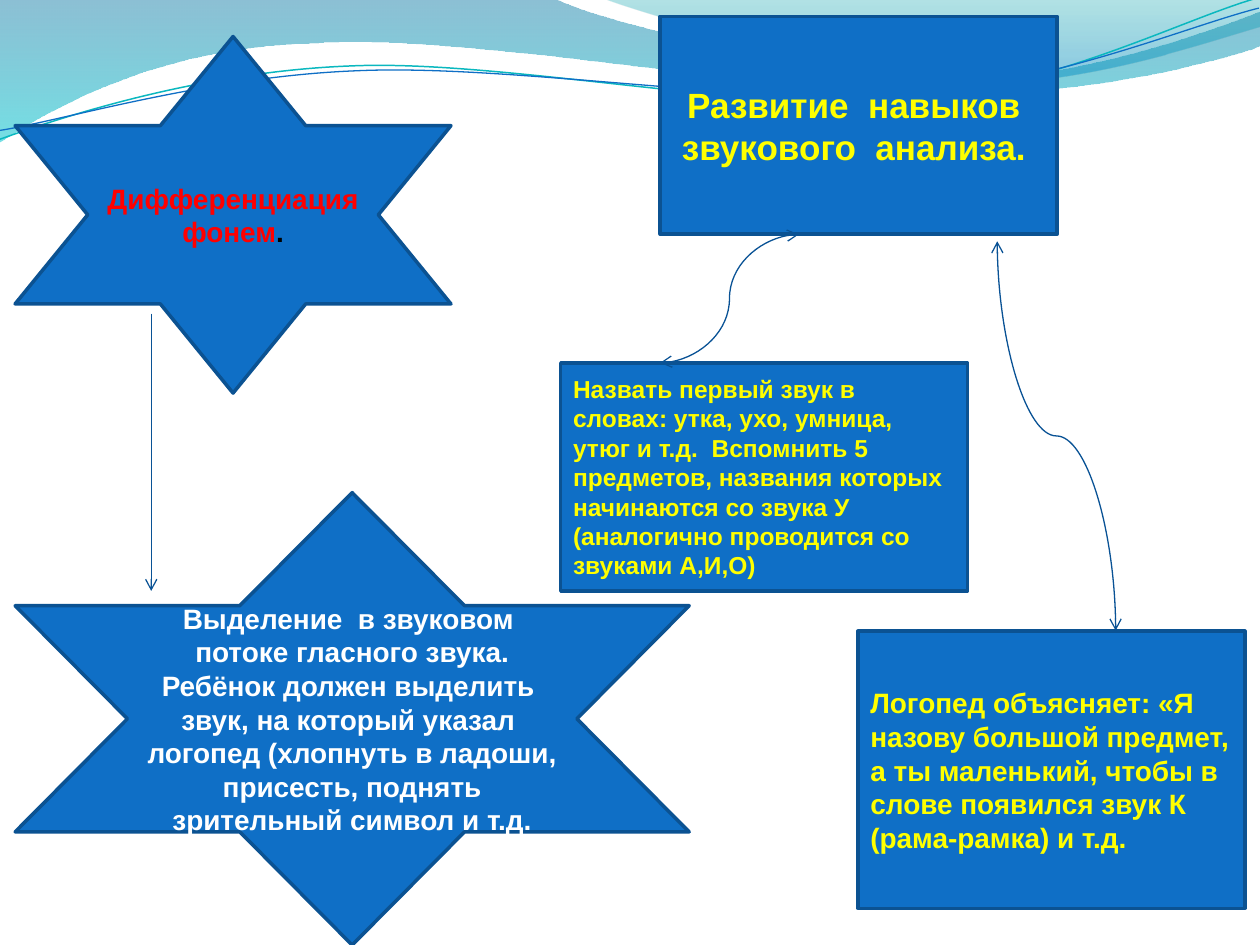
from lxml import etree
from pptx import Presentation
from pptx.dml.color import RGBColor
from pptx.enum.shapes import MSO_CONNECTOR as CONN, MSO_SHAPE as SHAPE
from pptx.enum.text import MSO_ANCHOR, PP_ALIGN
from pptx.oxml.ns import qn
from pptx.util import Inches, Pt

BLUE = RGBColor(0x0F, 0x6F, 0xC6)
EDGE = RGBColor(0x0B, 0x52, 0x92)
ARROW = RGBColor(0x09, 0x52, 0x95)
TEAL = RGBColor(0x0A, 0xB8, 0xBF)
WAVE_BLUE = RGBColor(0x00, 0x74, 0xA1)
WAVE_CYAN = RGBColor(0x00, 0xC6, 0xCF)
WAVE_TEAL = RGBColor(0x00, 0xA1, 0xA9)
WAVE_SKY = RGBColor(0x00, 0x8B, 0xBF)
RED = RGBColor(0xFF, 0x00, 0x00)
BLACK = RGBColor(0x00, 0x00, 0x00)
WHITE = RGBColor(0xFF, 0xFF, 0xFF)
YELLOW = RGBColor(0xFF, 0xFF, 0x00)

prs = Presentation()
prs.slide_width, prs.slide_height = Inches(10), Inches(7.5)
s = prs.slides.add_slide(prs.slide_layouts[6])
master_tree = prs.slide_master.shapes.element


def add_wave(start, segments, close):
    """Draw straight (2 numbers) and cubic Bezier (6 numbers) segments."""
    points = [(Inches(x), Inches(y)) for seg in segments
              for x, y in zip(seg[::2], seg[1::2])]
    builder = s.shapes.build_freeform(Inches(start[0]), Inches(start[1]))
    builder.add_line_segments(points, close=close)
    sp = builder.convert_to_shape()
    sp.shadow.inherit = False
    # Merge the three points of each Bezier segment into one curve
    lines = iter(list(sp.element.iter(qn("a:lnTo"))))
    for seg in segments:
        steps = [next(lines) for _ in seg[::2]]
        if len(steps) == 3:
            curve = etree.Element(qn("a:cubicBezTo"))
            steps[0].addprevious(curve)
            for step in steps:
                curve.append(step[0])
                step.getparent().remove(step)
    return sp


# Background waves: start, segments, gradient stops (position, colour, opacity %)
bands = [
    ((0, 0), [(4.4, -0.01), (4.76, 0.17, 6.64, 0.63, 7.58, 0.63),
              (8.53, 0.63, 9.58, 0.26, 10, 0.09), (10.01, 0.36),
              (9.83, 0.44, 8.7, 0.76, 7.46, 0.75),
              (6.22, 0.75, 3.82, 0.28, 2.57, 0.34),
              (1.29, 0.36, 0.46, 0.83, -0.01, 1.13)],
     [(0, WAVE_BLUE, 45), (1, WAVE_CYAN, 55)]),
    ((4.79, -0.01), [(5.09, 0.11, 6.82, 0.62, 7.69, 0.65),
                     (8.56, 0.69, 9.61, 0.32, 10, 0.21), (10, 0)],
     [(0, WAVE_TEAL, 30), (0.8, WAVE_SKY, 45)]),
]
for start, segments, stops in bands:
    sp = add_wave(start, segments, True)
    sp.line.fill.background()
    sp.fill.gradient()
    sp.fill.gradient_angle = 270
    for stop, (position, color, _) in zip(sp.fill.gradient_stops, stops):
        stop.position = position
        stop.color.rgb = color
    for clr, (_, _, opacity) in zip(sp.element.spPr.iter(qn("a:srgbClr")), stops):
        etree.SubElement(clr, qn("a:alpha"), val=str(opacity * 1000))
    master_tree.append(sp.element)

# Thin wavy lines, tilted slightly
threads = [
    ((-0.02, 0.87), [(0.47, 0.72, 1.58, 0.41, 2.78, 0.42),
                     (3.96, 0.42, 5.91, 0.93, 7.12, 0.9),
                     (8.32, 0.87, 9.4, 0.36, 10, 0.22)], TEAL, 0.85),
    ((-0.02, 0.8), [(0.46, 0.75, 1.64, 0.45, 2.83, 0.46),
                    (4.03, 0.46, 5.96, 0.88, 7.16, 0.85),
                    (8.35, 0.83, 9.42, 0.42, 10.01, 0.3)], BLUE, 0.75),
]
for start, segments, color, width in threads:
    sp = add_wave(start, segments, False)
    sp.rotation = 357.3
    sp.fill.background()
    sp.line.color.rgb = color
    sp.line.width = Pt(width)
    master_tree.append(sp.element)

# Stars and boxes: shape, frame, alignment, size, runs
STAR, BOX = SHAPE.STAR_6_POINT, SHAPE.RECTANGLE
CENTER, LEFT = PP_ALIGN.CENTER, PP_ALIGN.LEFT
figures = [
    (STAR, (0.12, 0.29, 3.46, 2.83), CENTER, 16,
     [("Дифференциация фонем", RED), (".", BLACK)]),
    (STAR, (0.12, 3.91, 5.35, 3.59), CENTER, 16,
     [("Выделение  в звуковом  потоке гласного звука. Ребёнок должен выделить  "
       "звук, на который указал  логопед (хлопнуть в ладоши, присесть, поднять "
       "зрительный символ и т.д.", WHITE)]),
    (BOX, (5.24, 0.13, 3.15, 1.73), CENTER, 20,
     [("Развитие  навыков  звукового  анализа. ", YELLOW)]),
    (BOX, (4.45, 2.88, 3.23, 1.81), LEFT, 14,
     [("Назвать первый звук в словах: утка, ухо, умница, утюг и т.д.  Вспомнить "
       "5 предметов, названия которых начинаются со звука У (аналогично "
       "проводится со звуками А,И,О)", YELLOW)]),
    (BOX, (6.81, 5.01, 3.07, 2.2), LEFT, 16,
     [("Логопед объясняет: «Я назову большой предмет, а ты маленький, чтобы в "
       "слове появился звук К (рама-рамка) и т.д.", YELLOW)]),
]
for kind, frame, align, size, runs in figures:
    sp = s.shapes.add_shape(kind, *map(Inches, frame))
    sp.shadow.inherit = False
    sp.fill.solid()
    sp.fill.fore_color.rgb = BLUE
    sp.line.color.rgb = EDGE
    sp.line.width = Pt(2)
    tf = sp.text_frame
    tf.word_wrap = True
    tf.vertical_anchor = MSO_ANCHOR.MIDDLE
    p = tf.paragraphs[0]
    p.alignment = align
    p.font.name, p.font.size, p.font.bold = "Arial", Pt(size), True
    for text, color in runs:
        r = p.add_run()
        r.text = text
        r.font.color.rgb = color

# Arrows: type, begin and end before rotation, rotation, arrowheads
arrows = [
    (CONN.STRAIGHT, (1.2, 2.49, 1.2, 4.69), 0, ["tailEnd"]),
    (CONN.CURVE, (6.34, 1.86, 5.24, 2.88), 0, ["headEnd", "tailEnd"]),
    (CONN.CURVE, (9.93, 2.99, 6.84, 3.93), 270, ["headEnd", "tailEnd"]),
]
for kind, ends, rotation, heads in arrows:
    c = s.shapes.add_connector(kind, *map(Inches, ends))
    c.line.color.rgb = ARROW
    c.line.width = Pt(0.75)
    spPr = c.element.spPr
    if rotation:
        spPr.find(qn("a:xfrm")).set("rot", str(rotation * 60000))
    ln = spPr.find(qn("a:ln"))
    for head in heads:
        etree.SubElement(ln, qn(f"a:{head}"), type="arrow")
    etree.SubElement(spPr, qn("a:effectLst"))

prs.save("out.pptx")
